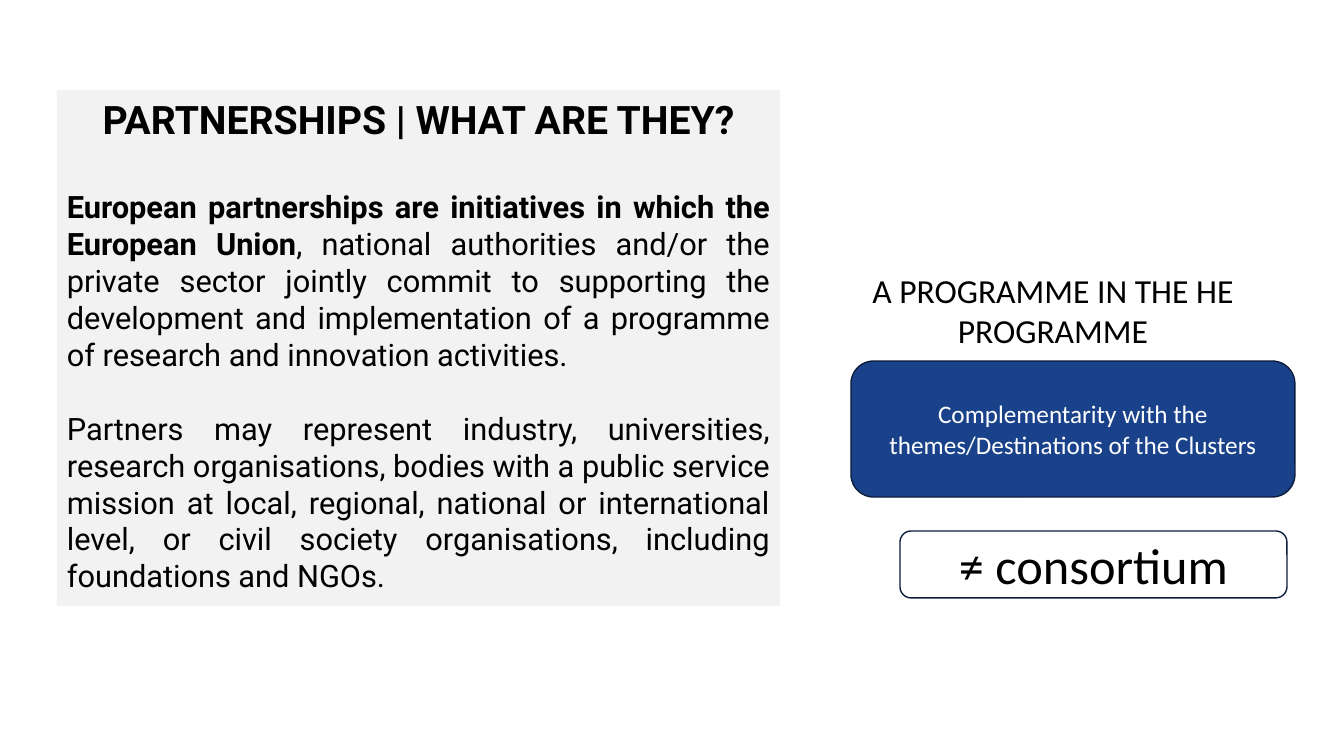
from pptx import Presentation
from pptx.dml.color import RGBColor
from pptx.enum.shapes import MSO_SHAPE as SHAPE
from pptx.enum.text import MSO_ANCHOR as ANCHOR, MSO_AUTO_SIZE as AUTO, PP_ALIGN as ALIGN
from pptx.util import Emu, Pt

COLORS = {
    "panel": "F2F2F2",
    "white": "FFFFFF",
    "black": "000000",
    "blue": "1A428A",
    "navy": "0B1D3C",
}


def px(n):
    return Emu(round(n * 914400 / 100.8))


def rgb(name):
    return RGBColor.from_string(COLORS[name])


class Deck:
    def __init__(self, width, height):
        self.prs = Presentation()
        self.prs.slide_width, self.prs.slide_height = px(width), px(height)
        self.s = self.prs.slides.add_slide(self.prs.slide_layouts[6])

    def box(self, kind, x, y, w, h, fill, line=None, anchor=ANCHOR.MIDDLE):
        sp = self.s.shapes.add_shape(kind, px(x), px(y), px(w), px(h))
        sp.shadow.inherit = False
        sp.fill.solid()
        sp.fill.fore_color.rgb = rgb(fill)
        if line:
            sp.line.color.rgb = rgb(line)
            sp.line.width = Pt(1)
        else:
            sp.line.fill.background()
        tf = sp.text_frame
        tf.word_wrap = True
        tf.vertical_anchor = anchor
        return tf

    def para(self, p, runs, size, font="Calibri", color="black", align=ALIGN.CENTER, before=0):
        p.alignment = align
        if before:
            p.space_before = Pt(before)
        for text, bold in runs:
            r = p.add_run()
            r.text = text
            r.font.name = font
            r.font.size = Pt(size)
            r.font.bold = bold
            r.font.color.rgb = rgb(color)

    def label(self, kind, x, y, w, h, text, size, fill, line=None, color="black"):
        tf = self.box(kind, x, y, w, h, fill, line)
        self.para(tf.paragraphs[0], [(text, False)], size, color=color)

    def panel(self, x, y, w, h, title, body):
        tf = self.box(SHAPE.RECTANGLE, x, y, w, h, "panel", anchor=ANCHOR.TOP)
        tf.auto_size = AUTO.SHAPE_TO_FIT_TEXT
        self.para(tf.paragraphs[0], [(title, True)], 28, "Roboto")
        for runs, before in body:
            self.para(tf.add_paragraph(), runs, 22, "Roboto", align=ALIGN.JUSTIFY, before=before)


def main():
    deck = Deck(1344, 756)
    deck.panel(57, 90, 723, 516, "PARTNERSHIPS | WHAT ARE THEY?", [
        ([("European partnerships are initiatives in which the European Union", True),
          (", national authorities and/or the private sector jointly commit to supporting "
           "the development and implementation of a programme of research and innovation "
           "activities.", False)], 33),
        ([("Partners may represent industry, universities, research organisations, bodies "
           "with a public service mission at local, regional, national or international "
           "level, or civil society organisations, including foundations and NGOs.", False)], 26),
    ])
    deck.label(SHAPE.RECTANGLE, 796, 259, 514, 102, "A PROGRAMME IN THE HE PROGRAMME", 24, "white")
    deck.label(SHAPE.ROUNDED_RECTANGLE, 900, 531, 387, 67, "≠ consortium", 36, "white", "navy")
    deck.label(SHAPE.ROUNDED_RECTANGLE, 851, 361, 444, 136,
               "Complementarity with the themes/Destinations of the Clusters", 18,
               "blue", "navy", "white")
    deck.prs.save("out.pptx")


if __name__ == "__main__":
    main()
